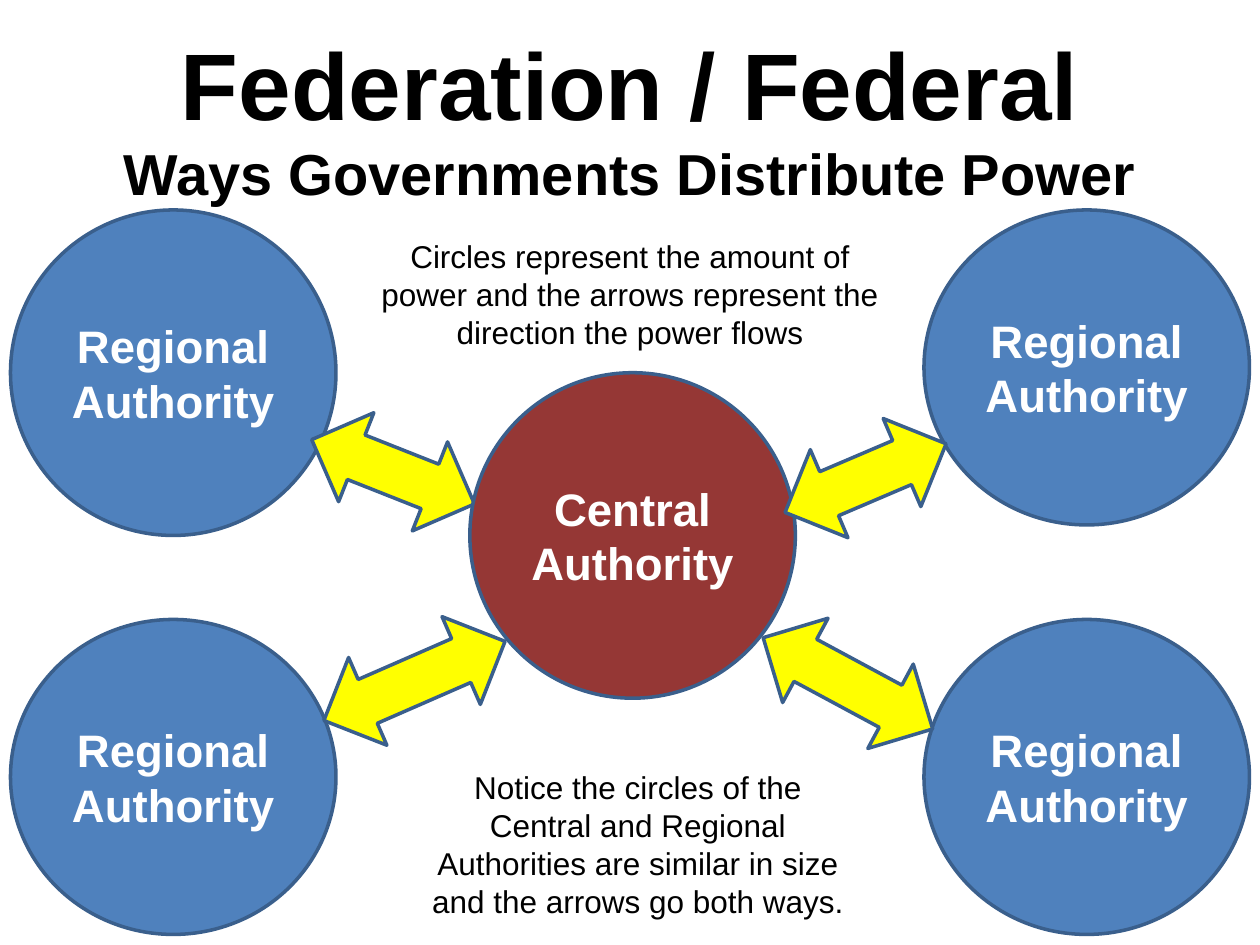
from pptx import Presentation
from pptx.dml.color import RGBColor
from pptx.enum.shapes import MSO_SHAPE
from pptx.enum.text import MSO_ANCHOR, PP_ALIGN
from pptx.util import Pt

BLACK = RGBColor(0x00, 0x00, 0x00)
WHITE = RGBColor(0xFF, 0xFF, 0xFF)
BLUE = RGBColor(0x4F, 0x81, 0xBD)
RED = RGBColor(0x95, 0x37, 0x35)
YELLOW = RGBColor(0xFF, 0xFF, 0x00)
OUTLINE = RGBColor(0x3A, 0x5F, 0x8C)

presentation = Presentation()
presentation.slide_width = Pt(720)
presentation.slide_height = Pt(540)
slide = presentation.slides.add_slide(presentation.slide_layouts[6])


def write_text(shape, text, size, bold, color):
    shape.text_frame.word_wrap = True
    paragraph = shape.text_frame.paragraphs[0]
    paragraph.text = text
    paragraph.alignment = PP_ALIGN.CENTER
    paragraph.font.name = "Arial"
    paragraph.font.size = Pt(size)
    paragraph.font.bold = bold
    paragraph.font.color.rgb = color


def add_outlined(kind, left, top, width, height, fill):
    shape = slide.shapes.add_shape(kind, Pt(left), Pt(top), Pt(width), Pt(height))
    shape.shadow.inherit = False
    shape.fill.solid()
    shape.fill.fore_color.rgb = fill
    shape.line.color.rgb = OUTLINE
    shape.line.width = Pt(2)
    return shape


# Title and subtitle: text, top, height, top margin, size
headings = [
    ("Federation / Federal", 6, 62.6, 9, 54),
    ("Ways Governments Distribute Power", 72, 48, 6.6, 33),
]
for text, top, height, margin, size in headings:
    box = slide.shapes.add_textbox(0, Pt(top), Pt(720), Pt(height))
    box.text_frame.margin_top = Pt(margin)
    write_text(box, text, size, True, BLACK)

# Authorities, each region followed by its arrow to the centre
DIAMETER = 186
LEFT, RIGHT = 6, 528
UPPER, LOWER = 120, 354
circle, arrow = "circle", "arrow"
diagram = [
    (circle, "Regional Authority", LEFT, UPPER, DIAMETER, BLUE),
    (arrow, 291.6, 197.3, 219.6, 100),
    (circle, "Central Authority", 268.5, 213, DIAMETER, RED),
    (circle, "Regional Authority", LEFT, LOWER, 180, BLUE),
    (arrow, 246.4, 209.5, 332.6, 113),
    (circle, "Regional Authority", RIGHT, UPPER, 180, BLUE),
    (arrow, 246.9, 467.3, 223.2, 100),
    (circle, "Regional Authority", RIGHT, LOWER, 180, BLUE),
    (arrow, 118.3, 457.2, 335.5, 110),
]
for kind, label, left, top, height, *fill in diagram:
    if kind == circle:
        shape = add_outlined(MSO_SHAPE.OVAL, left, top, DIAMETER, height, fill[0])
        shape.text_frame.vertical_anchor = MSO_ANCHOR.MIDDLE
        write_text(shape, label, 26, True, WHITE)
    else:
        shape = add_outlined(MSO_SHAPE.UP_DOWN_ARROW, left, top, 54.7, height, YELLOW)
        shape.rotation = label

# Explanatory notes
notes = [
    ("Notice the circles of the Central and Regional Authorities are similar "
     "in size and the arrows go both ways.", 238.5, 435.6, 252, 94.5),
    ("Circles represent the amount of power and the arrows represent the "
     "direction the power flows", 210, 132, 300, 72.7),
]
for text, left, top, width, height in notes:
    box = slide.shapes.add_textbox(Pt(left), Pt(top), Pt(width), Pt(height))
    write_text(box, text, 18, False, BLACK)

presentation.save("out.pptx")
